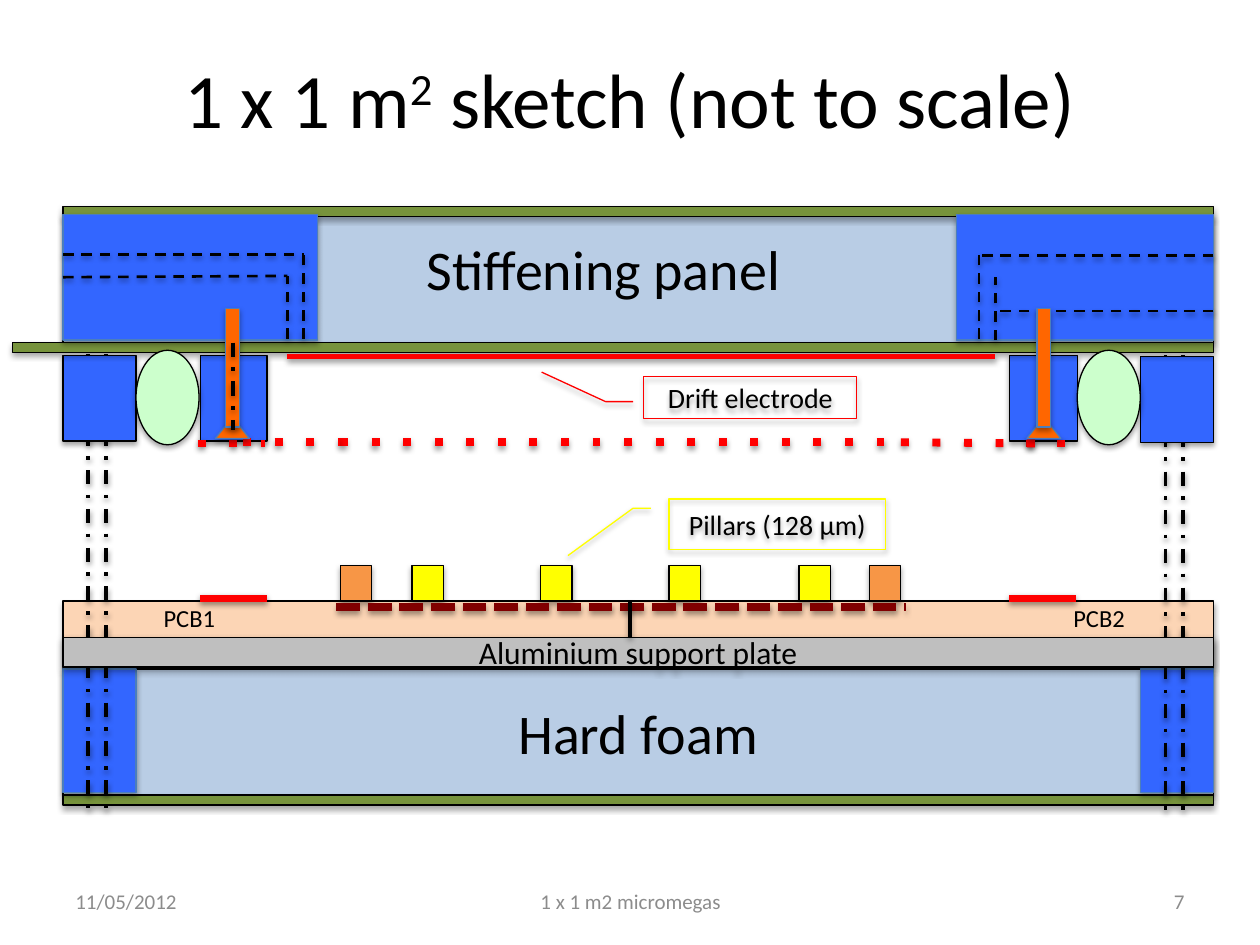
from lxml.etree import SubElement
from pptx import Presentation
from pptx.dml.color import RGBColor
from pptx.enum.shapes import MSO_CONNECTOR, MSO_SHAPE
from pptx.enum.text import MSO_ANCHOR, PP_ALIGN
from pptx.oxml.ns import qn
from pptx.util import Inches, Pt

RECT, OVAL, TRI = MSO_SHAPE.RECTANGLE, MSO_SHAPE.OVAL, MSO_SHAPE.ISOSCELES_TRIANGLE
CALLOUT = MSO_SHAPE.LINE_CALLOUT_2
STRAIGHT = MSO_CONNECTOR.STRAIGHT
LEFT, MID, RIGHT = PP_ALIGN.LEFT, PP_ALIGN.CENTER, PP_ALIGN.RIGHT
TOP, CENTER = MSO_ANCHOR.TOP, MSO_ANCHOR.MIDDLE

THEME = {
    "font": "Calibri",
    "black": "000000", "muted": "8C8C8C", "edge": "4B7EBC",
    "pcb": "FCD5B5", "copper": "F79646", "yellow": "FFFF00", "red": "FF0000",
    "foam": "B9CDE5", "green": "77933C", "blue": "3366FF", "metal": "BFBFBF",
    "seal": "CCFFCC", "screw": "FF6600", "maroon": "800000",
    "title": 44, "panel": 32, "plate": 18, "note": 16, "board": 14, "foot": 12,
}

X, W, END = 0.5, 9.13, 9.63
SIDE = 9.05

BASE = [
    (RECT, X, 4.77, W, 0.53, "pcb", "black"),
    *[(RECT, x, 4.49, 0.25, 0.28, color, "black") for x, color in [
        (2.7, "copper"), (3.27, "yellow"), (4.29, "yellow"),
        (5.31, "yellow"), (6.34, "yellow"), (6.9, "copper")]],
    (RECT, X, 5.31, W, 1, "foam", "black", "Hard foam", "panel"),
    (RECT, X, 6.31, W, 0.08, "green", "black"),
    *[(RECT, x, 5.31, 0.58, 0.98, "blue", "edge") for x in (X, SIDE)],
]
BOLTS = [(x, top, x, top + 3.66, "black", 2, "dashDot")
         for x, top in [(0.7, 2.81), (0.84, 2.81), (9.25, 2.82), (9.39, 2.82)]]
PLATE = [(RECT, X, 5.06, W, 0.23, "metal", "black", "Aluminium support plate", "plate")]
PADS = [(x, 4.75, x + 0.53, 4.75, "red", 4.5) for x in (1.59, 8.01)]
BLOCKS = [(RECT, x, y, w, 0.68, "blue", "black") for x, y, w in [
    (8.01, 2.82, 0.54), (1.59, 2.82, 0.53), (X, 2.82, 0.58), (SIDE, 2.83, 0.58)]]
MESH = [(*ends, "red", 4.5, "dot") for ends in [
    (2.7, 3.51, 7.17, 3.51), (8.14, 3.52, 8.53, 3.52), (7.15, 3.51, 8.27, 3.52),
    (1.93, 3.51, 2.7, 3.51), (1.57, 3.52, 2.1, 3.52)]]
PANEL = [
    (RECT, X, 1.72, W, 1, "foam", "black"),
    (RECT, X, 1.64, W, 0.08, "green", "black"),
    (RECT, 0.1, 2.72, 9.53, 0.08, "green", "black"),
    *[(OVAL, x, 2.78, 0.5, 0.75, "seal", "black") for x in (8.55, 1.08)],
    *[(RECT, x, 1.7, w, 1, "blue", "edge") for x, w in [(X, 2.02), (7.59, 2.04)]],
]


def screw(x):
    return [(TRI, x, 3.31, 0.27, 0.17, "screw", "edge"),
            (RECT, x + 0.08, 2.45, 0.11, 0.94, "screw", "edge")]


PIPES = [(*ends, "black", 1.5, "dash") for ends in [
    (END, 2.03, 7.77, 2.03), (END, 2.47, 7.91, 2.47),
    (7.9, 2.7, 7.9, 2.2), (7.77, 2.69, 7.77, 2.02),
    (X, 2.02, 2.41, 2.02), (X, 2.2, 2.28, 2.19),
    (2.28, 2.69, 2.28, 2.19), (2.41, 2.69, 2.41, 2.02)]]
AXIS = [(1.85, 2.72, 1.85, 3.41, "black", 2, "dashDot")]
DRIFT = [(2.28, 2.83, 7.9, 2.83, "red", 3)]
NOTES = [
    (CALLOUT, 5.11, 2.99, 1.69, 0.33, None, "red", "Drift electrode", "note",
     (0.6, -0.05, 0.6, -0.18, -0.11, -0.48)),
    (CALLOUT, 5.31, 3.96, 1.72, 0.4, None, "yellow", "Pillars (128 µm)", "note"),
]
ANODE = [(2.67, 4.82, 7.19, 4.82, "maroon", 4.5, "sysDash"),
         (5, 4.77, 5, 5.06, "black", 2)]
LAYERS = [BASE, PADS, BOLTS, PLATE, BLOCKS, MESH, PANEL, screw(1.71),
          PIPES, AXIS, screw(8.15), DRIFT, NOTES, ANODE]

TEXTS = [
    (X, 0.15, 9, 1.25, "1 x 1 m|2| sketch (not to scale)", "title", "black", MID, CENTER, True),
    (X, 6.95, 2.33, 0.4, "11/05/2012", "foot", "muted", LEFT, CENTER, True),
    (3.42, 6.95, 3.17, 0.4, "1 x 1 m2 micromegas", "foot", "muted", MID, CENTER, True),
    (7.17, 6.95, 2.33, 0.4, "7", "foot", "muted", RIGHT, CENTER, True),
    (3.29, 1.81, 3.04, 0.64, "Stiffening panel", "panel", "black", LEFT, TOP, False),
    (1.2, 4.74, 0.61, 0.34, "PCB1", "board", "black", LEFT, TOP, False),
    (8.42, 4.74, 0.61, 0.34, "PCB2", "board", "black", LEFT, TOP, False),
]


def tint(name):
    return RGBColor.from_string(THEME[name])


def shade(item, gap, alpha):
    props = item._element.spPr
    list_ = props.find(qn("a:effectLst"))
    if list_ is None:
        list_ = SubElement(props, qn("a:effectLst"))
    cast = SubElement(list_, qn("a:outerShdw"), blurRad=str(Pt(3.1)),
                      dist=str(Pt(gap)), dir="5400000", rotWithShape="0")
    color = SubElement(cast, qn("a:srgbClr"), val=THEME["black"])
    SubElement(color, qn("a:alpha"), val=str(alpha * 1000))


def write(frame, text, size, color, align, anchor, wrap):
    frame.word_wrap = wrap
    frame.vertical_anchor = anchor
    para = frame.paragraphs[0]
    para.alignment = align
    for i, part in enumerate(text.split("|")):
        run = para.add_run()
        run.text = part
        run.font.name = THEME["font"]
        run.font.size = Pt(THEME[size])
        run.font.color.rgb = tint(color)
        if i == 1:
            run.font._element.set("baseline", "30000")


def draw_box(slide, kind, x, y, w, h, fill, edge, text=None, size=None, bends=()):
    box = slide.shapes.add_shape(kind, *map(Inches, (x, y, w, h)))
    box.shadow.inherit = False
    if fill:
        box.fill.solid()
        box.fill.fore_color.rgb = tint(fill)
    else:
        box.fill.background()
    box.line.color.rgb = tint(edge)
    box.line.width = Pt(0.75)
    for i, bend in enumerate(bends):
        box.adjustments[i] = bend
    shade(box, 1.8, 35)
    if text:
        write(box.text_frame, text, size, "black", MID, CENTER, True)


def draw_line(slide, x1, y1, x2, y2, color, width, dash=None):
    line = slide.shapes.add_connector(STRAIGHT, *map(Inches, (x1, y1, x2, y2)))
    line.line.color.rgb = tint(color)
    line.line.width = Pt(width)
    if dash:
        SubElement(line._element.spPr.find(qn("a:ln")), qn("a:prstDash"), val=dash)
    shade(line, 1.6, 38)


def main():
    deck = Presentation()
    deck.slide_width, deck.slide_height = Inches(10), Inches(7.5)
    slide = deck.slides.add_slide(deck.slide_layouts[6])
    for layer in LAYERS:
        for part in layer:
            draw = draw_line if isinstance(part[4], str) else draw_box
            draw(slide, *part)
    for x, y, w, h, *style in TEXTS:
        area = slide.shapes.add_textbox(*map(Inches, (x, y, w, h)))
        write(area.text_frame, *style)
    deck.save("out.pptx")


if __name__ == "__main__":
    main()
